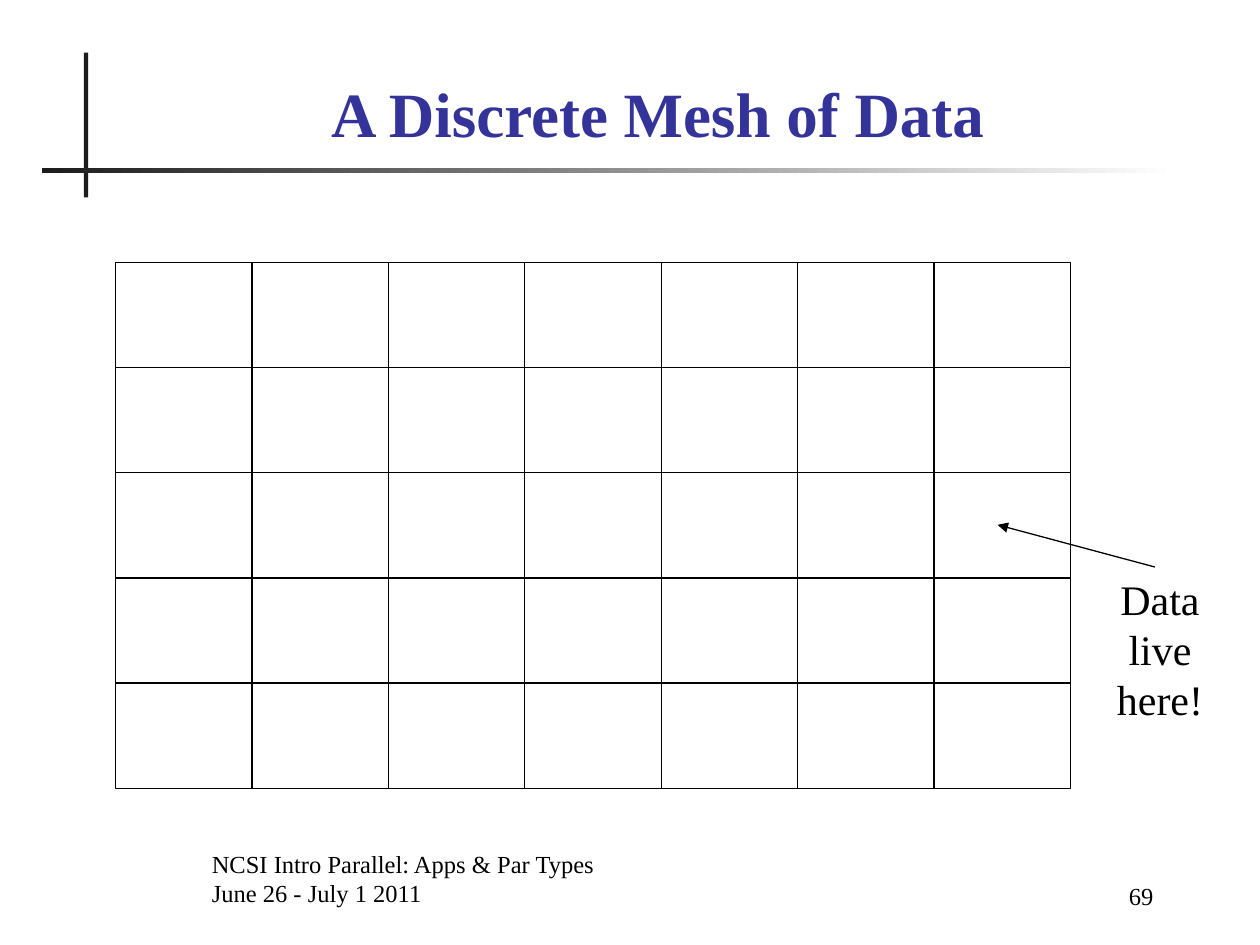
from itertools import product

from lxml import etree
from pptx import Presentation
from pptx.dml.color import RGBColor
from pptx.enum.shapes import MSO_CONNECTOR, MSO_SHAPE
from pptx.enum.text import MSO_ANCHOR, PP_ALIGN
from pptx.oxml.ns import qn
from pptx.util import Cm, Pt

RECTANGLE = MSO_SHAPE.RECTANGLE
STRAIGHT = MSO_CONNECTOR.STRAIGHT
TOP, BOTTOM = MSO_ANCHOR.TOP, MSO_ANCHOR.BOTTOM
LEFT, CENTER, RIGHT = PP_ALIGN.LEFT, PP_ALIGN.CENTER, PP_ALIGN.RIGHT

COLORS = {"title": "333399", "ink": "000000", "rule": "1C1C1C", "paper": "FFFFFF"}
FONT = "Times New Roman"

TITLE = ["A Discrete Mesh of Data"]
LABELS = [
    (["69"], (19.9, 17.2, 3.6, 1.27), 14, RIGHT, BOTTOM),
    (["Data live here!"], (22.01, 11.43, 2.75, 3.3), 24, CENTER, TOP),
    (["NCSI Intro Parallel: Apps & Par Types", "June 26 - July 1 2011"],
     (4.02, 17.15, 15.45, 1.27), 14, LEFT, BOTTOM),
]

COLUMNS, ROWS = 7, 5
MESH_LEFT, MESH_TOP = 2.33, 5.29
CELL_WIDTH, CELL_HEIGHT = 2.75, 2.12
VERTICAL_RULE = (1.69, 1.06, 0.09, 2.92)
HORIZONTAL_RULE = (0.85, 3.39, 22.86, 0.09)
POINTER = (23.28, 11.43, 20.11, 10.58)


def color(name):
    return RGBColor.from_string(COLORS[name])


def lengths(values):
    return [Cm(value) for value in values]


def write(frame, lines, size, align, anchor, ink="ink", bold=False):
    frame.word_wrap = True
    frame.vertical_anchor = anchor
    frame.text = "\n".join(lines)
    font_format = {"name": FONT, "size": Pt(size), "bold": bold}
    for paragraph in frame.paragraphs:
        paragraph.alignment = align
        paragraph.space_before = Pt(0)
        for key, value in font_format.items():
            setattr(paragraph.font, key, value)
        paragraph.font.color.rgb = color(ink)


def add_rectangle(slide, box):
    rectangle = slide.shapes.add_shape(RECTANGLE, *lengths(box))
    rectangle.shadow.inherit = False
    return rectangle


def add_rules(slide):
    vertical = add_rectangle(slide, VERTICAL_RULE)
    vertical.fill.solid()
    vertical.fill.fore_color.rgb = color("rule")
    horizontal = add_rectangle(slide, HORIZONTAL_RULE)
    horizontal.fill.gradient()
    horizontal.fill.gradient_angle = 0
    for stop, name in zip(horizontal.fill.gradient_stops, ("rule", "paper")):
        stop.color.rgb = color(name)
    for rule in (vertical, horizontal):
        rule.line.fill.background()


def outline(line):
    line.color.rgb = color("ink")
    line.width = Pt(0.75)


def add_mesh(slide):
    for column, row in product(range(COLUMNS), range(ROWS)):
        cell = add_rectangle(slide, (MESH_LEFT + column * CELL_WIDTH,
                                     MESH_TOP + row * CELL_HEIGHT,
                                     CELL_WIDTH, CELL_HEIGHT))
        cell.fill.background()
        outline(cell.line)


def add_pointer(slide):
    pointer = slide.shapes.add_connector(STRAIGHT, *lengths(POINTER))
    outline(pointer.line)
    properties = pointer._element.spPr
    etree.SubElement(properties.find(qn("a:ln")), qn("a:tailEnd"), type="triangle")
    etree.SubElement(properties, qn("a:effectLst"))


def main():
    deck = Presentation()
    deck.slide_width, deck.slide_height = Cm(25.4), Cm(19.05)
    slide = deck.slides.add_slide(deck.slide_layouts[5])

    add_rules(slide)
    title = slide.shapes.title
    title.left, title.top, title.width, title.height = lengths((2.12, 1.27, 22.28, 1.88))
    write(title.text_frame, TITLE, 36, CENTER, BOTTOM, "title", True)

    add_mesh(slide)
    add_pointer(slide)
    for lines, box, size, align, anchor in LABELS:
        label = slide.shapes.add_textbox(*lengths(box))
        write(label.text_frame, lines, size, align, anchor)

    deck.save("out.pptx")


if __name__ == "__main__":
    main()
